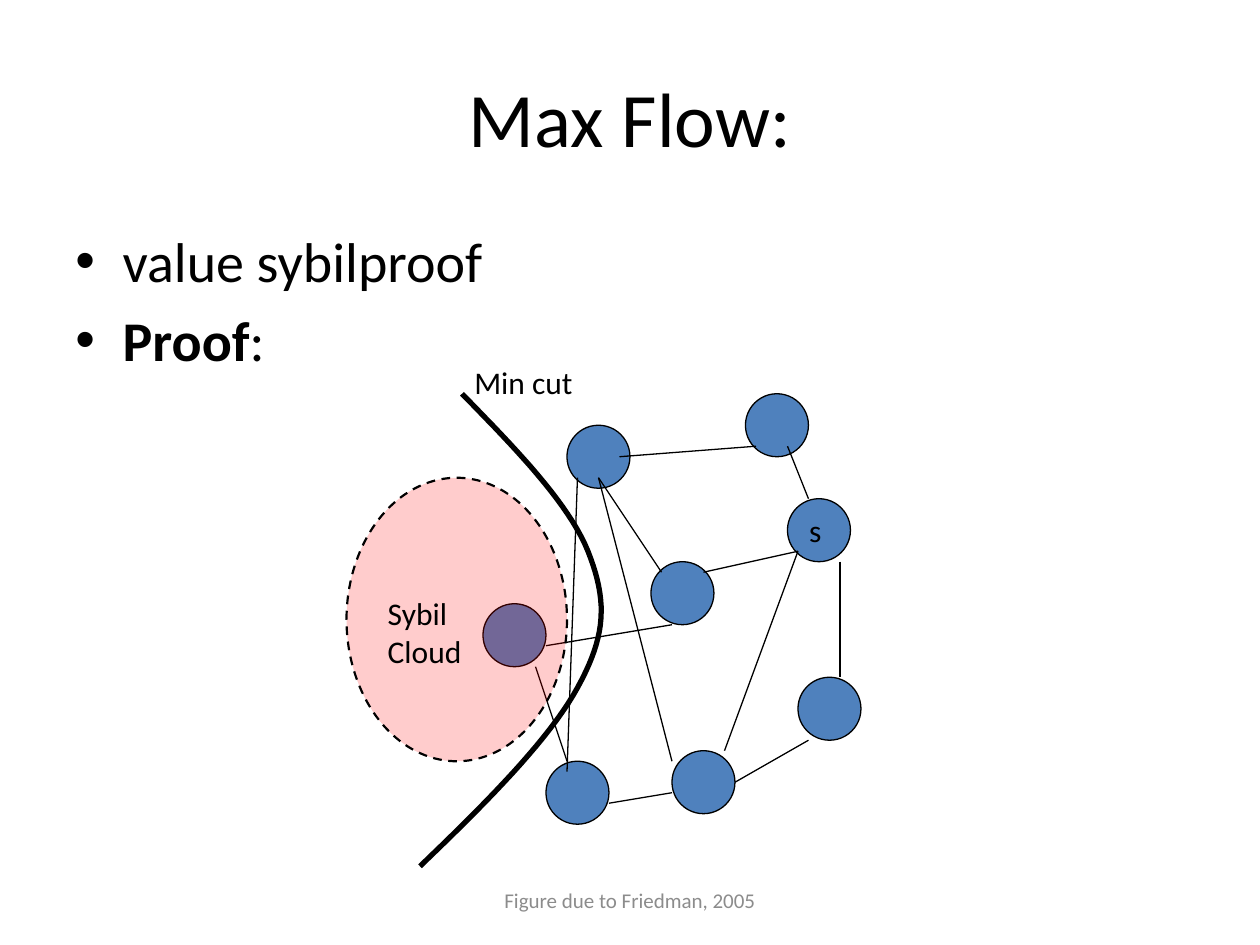
from lxml.etree import SubElement
from pptx import Presentation
from pptx.dml.color import RGBColor
from pptx.enum.dml import MSO_LINE
from pptx.enum.shapes import MSO_CONNECTOR, MSO_SHAPE
from pptx.enum.text import MSO_ANCHOR, PP_ALIGN
from pptx.oxml.ns import qn
from pptx.util import Pt

PX = 9525  # EMU per px, 96 px to the inch
BLACK = RGBColor(0x00, 0x00, 0x00)
GRAY = RGBColor(0x8C, 0x8C, 0x8C)
BLUE = RGBColor(0x4F, 0x81, 0xBD)
RED = RGBColor(0xFF, 0x00, 0x00)


def write(sp, text, size, color=BLACK, align=PP_ALIGN.LEFT, anchor=MSO_ANCHOR.TOP, wrap=True):
    tf = sp.text_frame
    tf.text = text
    tf.word_wrap = wrap
    tf.vertical_anchor = anchor
    for p in tf.paragraphs:
        p.alignment = align
        for r in p.runs:
            r.font.name = "Calibri"
            r.font.size = Pt(size)
            r.font.color.rgb = color
    return tf


def add_ellipse(x, y, w, h, fill, line_width):
    sp = shapes.add_shape(MSO_SHAPE.OVAL, x * PX, y * PX, w * PX, h * PX)
    sp.shadow.inherit = False
    sp.fill.solid()
    sp.fill.fore_color.rgb = fill
    sp.line.color.rgb = BLACK
    sp.line.width = Pt(line_width)
    return sp


prs = Presentation()
prs.slide_width, prs.slide_height = 960 * PX, 720 * PX
s = prs.slides.add_slide(prs.slide_layouts[5])
shapes = s.shapes

# Title and bullets
title = shapes.title
title.left, title.top, title.width, title.height = 48 * PX, 29 * PX, 864 * PX, 120 * PX
write(title, "Max Flow:", 44, align=PP_ALIGN.CENTER, anchor=MSO_ANCHOR.MIDDLE)

body = shapes.add_textbox(48 * PX, 168 * PX, 864 * PX, 475 * PX)
tf = write(body, "value sybilproof\nProof", 32)
proof = tf.paragraphs[1].runs[0]
proof.font.bold = True
colon = tf.paragraphs[1].add_run()
colon.text = ":"
colon.font.name = "Calibri"
colon.font.size = Pt(32)
colon.font.color.rgb = BLACK
for p in tf.paragraphs:
    p.space_before = Pt(6.4)
    pPr = p._p.get_or_add_pPr()
    pPr.set("marL", str(36 * PX))
    pPr.set("indent", str(-36 * PX))
    SubElement(pPr, qn("a:buFont"), typeface="Arial")
    SubElement(pPr, qn("a:buChar"), char="•")

# Network nodes: left, top, label
NODES = [
    (368, 460, ""), (432, 324, ""), (416, 580, ""), (600, 380, "s"),
    (512, 572, ""), (496, 428, ""), (608, 516, ""), (568, 300, ""),
]
for x, y, label in NODES:
    node = add_ellipse(x, y, 48, 48, BLUE, 0.75)
    if label:
        write(node, label, 18, anchor=MSO_ANCHOR.MIDDLE, wrap=False)

# Network edges: x1, y1, x2, y2
EDGES = [
    (472, 348, 576, 340), (456, 364, 504, 436), (416, 492, 512, 476),
    (408, 508, 432, 580), (464, 612, 512, 604), (608, 420, 552, 572),
    (616, 564, 560, 596), (640, 428, 640, 516), (456, 364, 512, 580),
    (440, 364, 432, 588), (536, 436, 608, 420), (600, 340, 616, 380),
]
for edge in EDGES:
    line = shapes.add_connector(MSO_CONNECTOR.STRAIGHT, *(v * PX for v in edge))
    line.line.color.rgb = BLACK
    line.line.width = Pt(0.75)
    SubElement(line._element.spPr, qn("a:effectLst"))

# Sybil cloud
cloud = add_ellipse(264, 364, 168, 216, RED, 1.25)
cloud.line.dash_style = MSO_LINE.DASH
SubElement(cloud._element.spPr.find(f"{qn('a:solidFill')}/{qn('a:srgbClr')}"), qn("a:alpha"), val="20000")
cloud_label = shapes.add_textbox(286 * PX, 448 * PX, 82 * PX, 67 * PX)
write(cloud_label, "Sybil\nCloud", 18, wrap=False)

# Min cut: Bézier pieces sampled into short segments
CUT = [(352, 300), (393, 342), (433, 383), (448, 420), (463, 458),
       (462, 484), (440, 524), (418, 564), (370, 612), (320, 660)]
STEPS = 20
cut_points = []
for i in range(0, len(CUT) - 1, 3):
    for step in range(1, STEPS + 1):
        t = step / STEPS
        weights = ((1 - t) ** 3, 3 * t * (1 - t) ** 2, 3 * t * t * (1 - t), t ** 3)
        cut_points.append(tuple(
            round(PX * sum(k * pt[axis] for k, pt in zip(weights, CUT[i:i + 4])))
            for axis in (0, 1)))
builder = shapes.build_freeform(CUT[0][0] * PX, CUT[0][1] * PX)
builder.add_line_segments(cut_points, close=False)
cut = builder.convert_to_shape()
cut.shadow.inherit = False
cut.fill.background()
cut.line.color.rgb = BLACK
cut.line.width = Pt(3)
cut_label = shapes.add_textbox(352 * PX, 272 * PX, 97 * PX, 38 * PX)
write(cut_label, "Min cut", 18, wrap=False)

credit = shapes.add_textbox(328 * PX, 667 * PX, 304 * PX, 38 * PX)
write(credit, "Figure due to Friedman, 2005", 12, GRAY, PP_ALIGN.CENTER, MSO_ANCHOR.MIDDLE)

prs.save("out.pptx")
